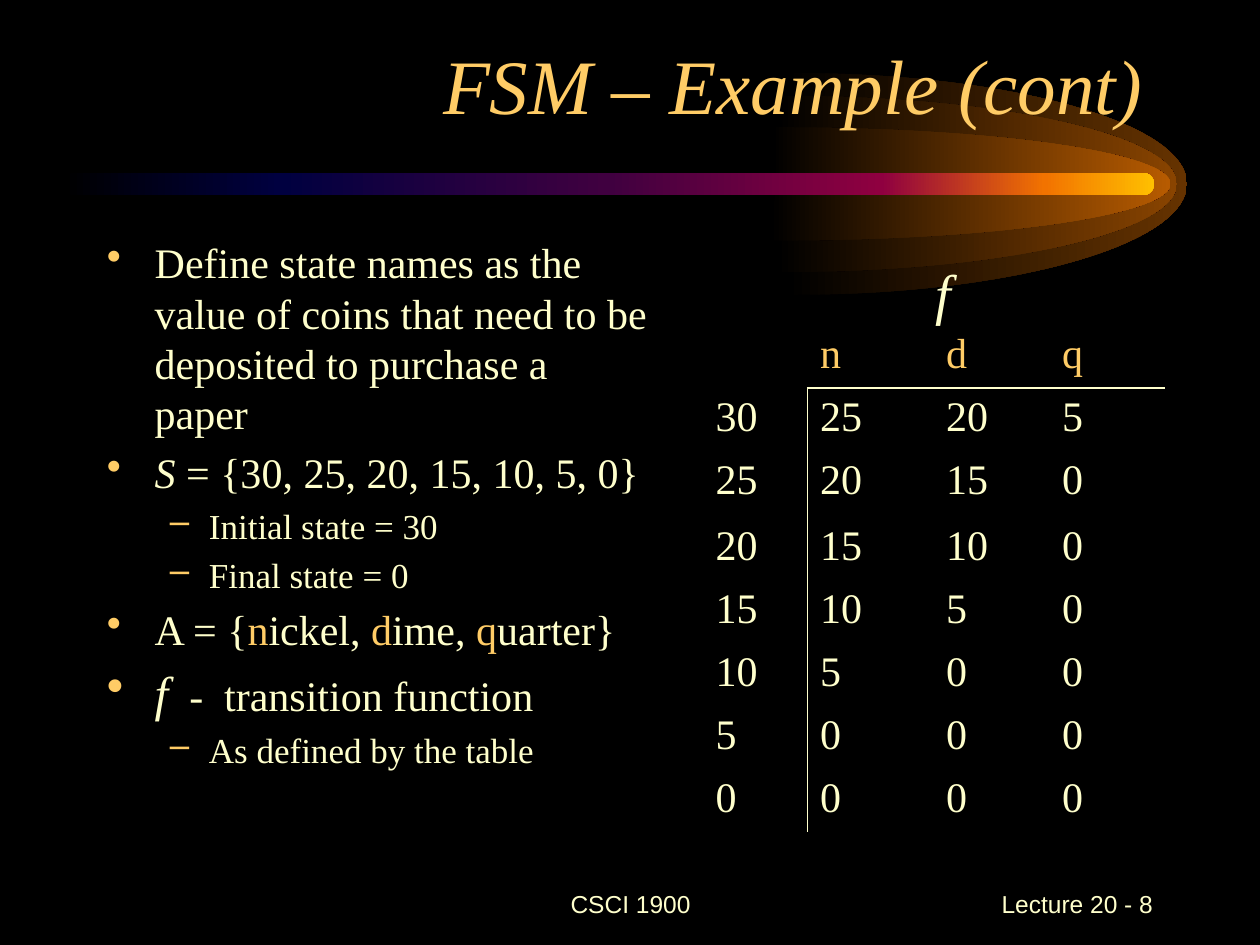
"""Build the finite state machine example slide with its transition table."""
from dataclasses import dataclass

from lxml.etree import SubElement
from pptx import Presentation
from pptx.dml.color import RGBColor
from pptx.enum.shapes import MSO_SHAPE
from pptx.enum.text import MSO_ANCHOR, PP_ALIGN
from pptx.oxml.ns import qn
from pptx.util import Inches, Pt


@dataclass(frozen=True)
class Theme:
    background: str = "000000"
    text: str = "FFFFCC"
    accent: str = "FFCC66"
    serif: str = "Times New Roman"
    sans: str = "Arial"
    title: int = 44
    symbol: int = 32
    function: int = 28
    body: int = 24
    detail: int = 20
    footer: int = 14


THEME = Theme()
TITLE = "FSM – Example (cont)"
FOOTERS = [
    ("CSCI 1900", (3.42, 6.92, 3.17, 0.5), PP_ALIGN.CENTER),
    ("Lecture 20 - 8", (7.17, 6.92, 2.08, 0.5), PP_ALIGN.RIGHT),
]
PLAIN = {}
ITALIC = {"italic": True}
KEY = {"color": THEME.accent}
POINTS = [
    (0, [("Define state names as the value of coins that need to be "
          "deposited to purchase a paper", PLAIN)]),
    (0, [("S", ITALIC), (" = {30, 25, 20, 15, 10, 5, 0}", PLAIN)]),
    (1, [("Initial state = 30", PLAIN)]),
    (1, [("Final state = 0", PLAIN)]),
    (0, [("A = {", PLAIN), ("n", KEY), ("ickel, ", PLAIN), ("d", KEY),
         ("ime, ", PLAIN), ("q", KEY), ("uarter}", PLAIN)]),
    (0, [("f", {"italic": True, "size": THEME.function}),
         ("  -  transition function", PLAIN)]),
    (1, [("As defined by the table", PLAIN)]),
]
LEVELS = [(THEME.body, "•", 0.38, 0.38), (THEME.detail, "–", 0.81, 0.31)]
TRANSITIONS = [
    ("", "n", "d", "q"),
    (30, 25, 20, 5),
    (25, 20, 15, 0),
    (20, 15, 10, 0),
    (15, 10, 5, 0),
    (10, 5, 0, 0),
    (5, 0, 0, 0),
    (0, 0, 0, 0),
]
COLUMN_WIDTHS = [0.83, 1, 0.92, 0.92]
ROW_HEIGHTS = [0.5, 0.5, 0.52, 0.5, 0.5, 0.5, 0.5, 0.5]
NO_STYLE = "{2D5ABB26-0587-4C30-8999-92F81FD0307C}"
COMET_MIDDLE = 1.46
COMET_REACH = 3.13
CURVE = 0.55
GLOWS = [(6.29, 0.88, "663300"), (6.21, 0.7, "894400"), (6.16, 0.45, "B75B00")]
TAIL_STOPS = [(0, "000000"), (20, "000040"), (50, "400040"),
              (75, "8F0040"), (90, "F27300"), (100, "FFBF00")]


def style(font, size=None, color=None, name=None, italic=None):
    if size:
        font.size = Pt(size)
    if color:
        font.color.rgb = RGBColor.from_string(color)
    if name:
        font.name = name
    if italic is not None:
        font.italic = italic


def paint_gradient(shape, stops):
    shape.shadow.inherit = False
    shape.line.fill.background()
    shape.fill.gradient()
    shape.fill.gradient_angle = 0
    stop_list = shape._element.spPr.find(".//" + qn("a:gsLst"))
    for old in list(stop_list):
        stop_list.remove(old)
    for position, color in stops:
        stop = SubElement(stop_list, qn("a:gs"), pos=str(position * 1000))
        SubElement(stop, qn("a:srgbClr"), val=color)


def bend_lines(shape, curves):
    lines = shape._element.findall(".//" + qn("a:lnTo"))
    for index in range(0, curves * 3, 3):
        first, *others = lines[index:index + 3]
        first.tag = qn("a:cubicBezTo")
        for line in others:
            first.append(line[0])
            line.getparent().remove(line)


def add_comet(page):
    for center, radius, color in GLOWS:
        outline = [(0, -1), (CURVE, -1), (1, -CURVE), (1, 0),
                   (1, CURVE), (CURVE, 1), (0, 1), (-0.016, 1), (0, 0)]
        places = [(Inches(center + COMET_REACH * across), Inches(COMET_MIDDLE + radius * down))
                  for across, down in outline]
        builder = page.shapes.build_freeform(*places[0])
        builder.add_line_segments(places[1:], close=True)
        glow = builder.convert_to_shape()
        bend_lines(glow, 2)
        paint_gradient(glow, [(0, THEME.background), (100, color)])
    tail = page.shapes.add_shape(MSO_SHAPE.ROUNDED_RECTANGLE, Inches(0.5), Inches(1.37),
                                 Inches(8.66), Inches(0.18))
    tail.adjustments[0] = 0.5
    paint_gradient(tail, TAIL_STOPS)


def add_title(page):
    title = page.shapes.title
    title.left, title.top, title.width, title.height = map(Inches, (0.67, 0.25, 8.5, 0.83))
    title.text_frame.text = TITLE
    title.text_frame.vertical_anchor = MSO_ANCHOR.BOTTOM
    paragraph = title.text_frame.paragraphs[0]
    paragraph.alignment = PP_ALIGN.RIGHT
    style(paragraph.font, THEME.title, THEME.accent, THEME.serif, True)
    page.shapes._spTree.append(title._element)


def add_text_box(page, place):
    box = page.shapes.add_textbox(*map(Inches, place))
    box.text_frame.word_wrap = True
    return box.text_frame


def add_line(page, text, place, alignment, anchor, **font):
    frame = add_text_box(page, place)
    frame.vertical_anchor = anchor
    paragraph = frame.paragraphs[0]
    paragraph.text = text
    paragraph.alignment = alignment
    style(paragraph.font, color=THEME.text, **font)


def add_points(page):
    frame = add_text_box(page, (0.75, 1.83, 4.5, 4.92))
    for index, (level, spans) in enumerate(POINTS):
        size, bullet, margin, hang = LEVELS[level]
        paragraph = frame.add_paragraph() if index else frame.paragraphs[0]
        paragraph.level = level
        paragraph.space_before = Pt(size * 0.2)
        style(paragraph.font, size, THEME.text, THEME.serif)
        for text, look in spans:
            span = paragraph.add_run()
            span.text = text
            style(span.font, **look)
        properties = paragraph._p.get_or_add_pPr()
        properties.set("marL", str(Inches(margin)))
        properties.set("indent", str(-Inches(hang)))
        default = properties.find(qn("a:defRPr"))
        bullet_color = SubElement(properties, qn("a:buClr"))
        SubElement(bullet_color, qn("a:srgbClr"), val=THEME.accent)
        SubElement(properties, qn("a:buChar"), char=bullet)
        properties.append(default)


def add_borders(cell, row, column):
    sides = {"a:lnL": row > 0 and column == 1, "a:lnR": row > 0 and column == 0,
             "a:lnT": row == 1 and column > 0, "a:lnB": row == 0 and column > 0}
    for side, visible in sides.items():
        border = SubElement(cell._tc.get_or_add_tcPr(), qn(side), w=str(Pt(1)))
        fill = SubElement(border, qn("a:solidFill" if visible else "a:noFill"))
        if visible:
            SubElement(fill, qn("a:srgbClr"), val=THEME.text)


def add_transitions(page):
    frame = page.shapes.add_table(len(TRANSITIONS), len(COLUMN_WIDTHS), Inches(5.58), Inches(2.58),
                                  Inches(sum(COLUMN_WIDTHS)), Inches(sum(ROW_HEIGHTS)))
    table = frame.table
    table.first_row = table.horz_banding = False
    table._tbl.tblPr.find(qn("a:tableStyleId")).text = NO_STYLE
    for column, width in zip(table.columns, COLUMN_WIDTHS):
        column.width = Inches(width)
    for row, (values, height) in enumerate(zip(TRANSITIONS, ROW_HEIGHTS)):
        table.rows[row].height = Inches(height)
        for column, value in enumerate(values):
            cell = table.cell(row, column)
            cell.text = str(value)
            paragraph = cell.text_frame.paragraphs[0]
            paragraph.space_before = Pt(THEME.body * 0.2)
            style(paragraph.font, THEME.body, THEME.text if row else THEME.accent, THEME.serif)
            add_borders(cell, row, column)
            cell.fill.background()


def main():
    deck = Presentation()
    deck.slide_width, deck.slide_height = Inches(10), Inches(7.5)
    page = deck.slides.add_slide(deck.slide_layouts[5])
    page.background.fill.solid()
    page.background.fill.fore_color.rgb = RGBColor.from_string(THEME.background)
    add_comet(page)
    for text, place, alignment in FOOTERS:
        add_line(page, text, place, alignment, MSO_ANCHOR.MIDDLE,
                 size=THEME.footer, name=THEME.sans)
    add_title(page)
    add_points(page)
    add_transitions(page)
    add_line(page, "f", (7.33, 2, 0.58, 0.63), PP_ALIGN.LEFT, MSO_ANCHOR.TOP,
             size=THEME.symbol, name=THEME.serif, italic=True)
    deck.save("out.pptx")


if __name__ == "__main__":
    main()
